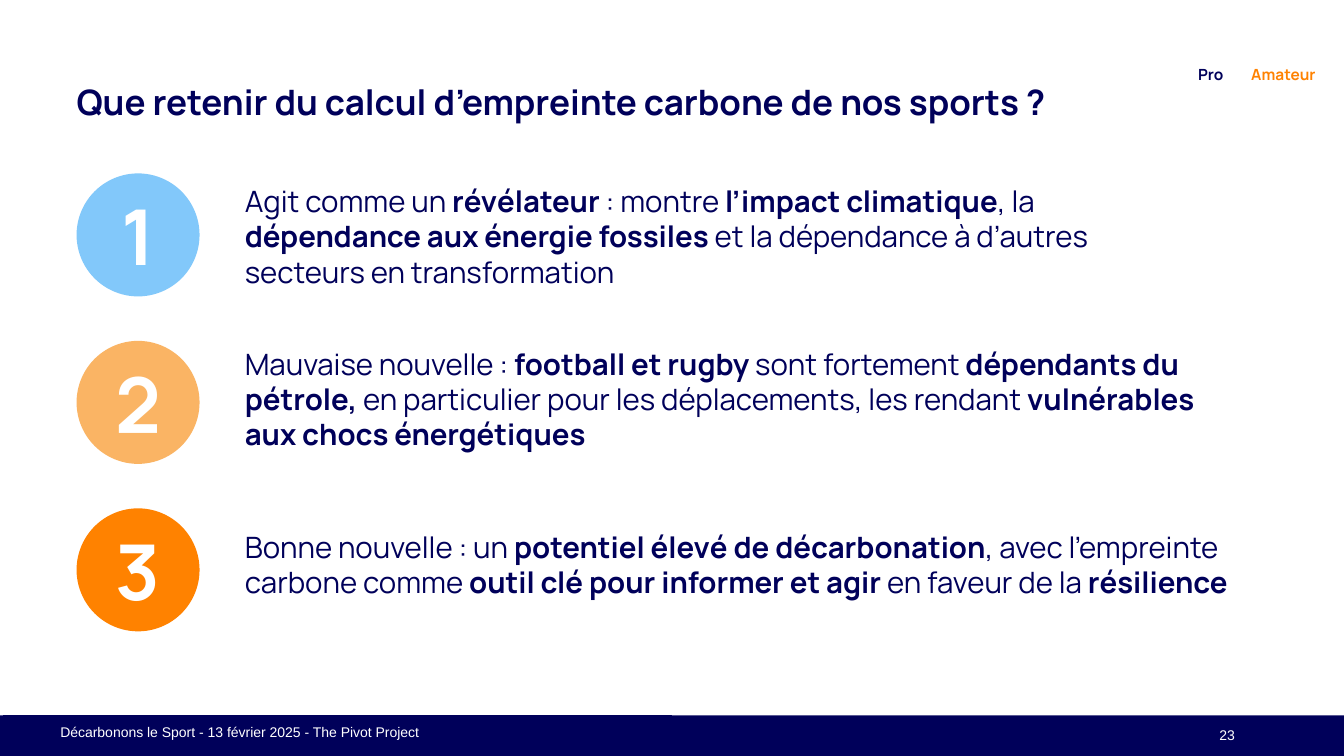
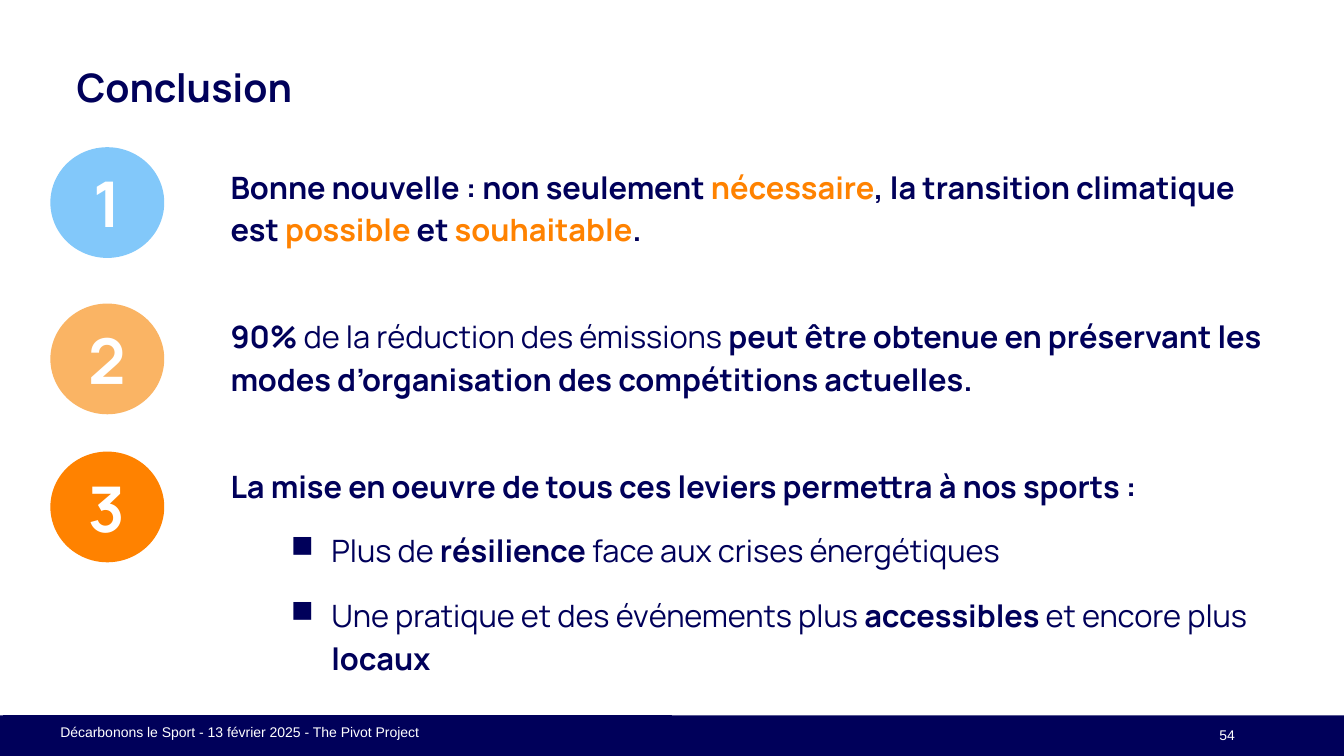
from dataclasses import dataclass

from lxml.etree import SubElement
from pptx import Presentation
from pptx.dml.color import RGBColor
from pptx.enum.shapes import MSO_SHAPE
from pptx.enum.text import MSO_ANCHOR, PP_ALIGN
from pptx.oxml.ns import qn
from pptx.util import Cm, Pt


@dataclass(frozen=True)
class Theme:
    navy: str = "00005A"
    orange: str = "FF8200"
    white: str = "FFFFFF"
    circles: tuple = ("82C8FA", "FAB464", "FF8200")
    font: str = "Manrope"
    footer_font: str = "Arial"
    footer_size: int = 10
    tag_size: int = 11
    lesson_size: int = 21
    conclusion_size: int = 22
    inset: float = 0.25


THEME = Theme()


@dataclass(frozen=True)
class Span:
    text: str
    bold: bool = False
    color: str = THEME.navy


def strong(text):
    return Span(text, bold=True)


def accent(text):
    return Span(text, bold=True, color=THEME.orange)


# Content; positions and sizes are in centimetres
FOOTER = "Décarbonons le Sport - 13 février 2025 - The Pivot Project"
BANDS = [(0, 18.03, 33.87, 1.02), (0.08, 18.03, 16.84, 0.97)]

LESSONS_TITLE = "Que retenir du calcul d’empreinte carbone de nos sports ?"
TAGS = [
    ("Pro", THEME.navy, (29.46, 1.52, 2.11, 0.71)),
    ("Amateur", THEME.orange, (31.06, 1.52, 2.57, 0.71)),
]
LESSON_LEFT = 5.92
# Each lesson: top, width, spans
LESSONS = [
    (4.37, 24.16, [
        Span("Agit comme un "), strong("révélateur "), Span(": montre "),
        strong("l’impact climatique"), Span(", la "),
        strong("dépendance aux énergie fossiles"),
        Span(" et la dépendance à d’autres secteurs en transformation"),
    ]),
    (8.46, 25.81, [
        Span("Mauvaise nouvelle : "), strong("football et rugby"),
        Span(" sont fortement"), strong(" dépendants du pétrole,"),
        Span(" en particulier pour les déplacements, les rendant "),
        strong("vulnérables aux chocs énergétiques"),
    ]),
    (13.08, 26.31, [
        Span("Bonne nouvelle : un "), strong("potentiel élevé de décarbonation"),
        Span(", avec l’empreinte carbone comme "),
        strong("outil clé pour informer et agir"),
        Span(" en faveur de la "), strong("résilience"),
    ]),
]

CONCLUSION_TITLE = "Conclusion"
# Each paragraph: space before in points, bulleted, spans
CONCLUSIONS = [
    (0, False, [
        strong("Bonne nouvelle : non seulement "), accent("nécessaire"),
        strong(", la transition climatique est "), accent("possible"),
        strong(" et "), accent("souhaitable"), strong("."),
    ]),
    (46, False, [
        strong("90% "), Span("de la réduction des émissions"),
        strong(" peut être obtenue en préservant les modes d’organisation"
               " des compétitions actuelles."),
    ]),
    (46, False, [
        strong("La mise en oeuvre de tous ces leviers permettra à nos sports :"),
    ]),
    (16, True, [
        Span("Plus de "), strong("résilience"),
        Span(" face aux crises énergétiques"),
    ]),
    (16, True, [
        Span("Une pratique et des événements plus "), strong("accessibles"),
        Span(" et encore plus "), strong("locaux"),
    ]),
]


# Shared drawing helpers
def write(para, spans, size, font=THEME.font):
    for span in spans:
        run = para.add_run()
        run.text = span.text
        run.font.name = font
        run.font.size = Pt(size)
        run.font.bold = span.bold
        run.font.color.rgb = RGBColor.from_string(span.color)


def prepare_frame(frame, inset, anchor, wrap=True):
    frame.word_wrap = wrap
    frame.vertical_anchor = anchor
    frame.margin_left = frame.margin_right = Cm(inset)
    frame.margin_top = frame.margin_bottom = Cm(inset)


def add_text(page, place, spans, size, font=THEME.font, inset=THEME.inset,
             anchor=MSO_ANCHOR.TOP, align=PP_ALIGN.LEFT):
    box = page.shapes.add_textbox(*map(Cm, place))
    prepare_frame(box.text_frame, inset, anchor)
    para = box.text_frame.paragraphs[0]
    para.alignment = align
    write(para, spans, size, font)
    return box


def add_filled(page, kind, place, color):
    shape = page.shapes.add_shape(kind, *map(Cm, place))
    shape.shadow.inherit = False
    shape.fill.solid()
    shape.fill.fore_color.rgb = RGBColor.from_string(color)
    shape.line.fill.background()
    return shape


def add_circles(page, left, tops, width, height, size):
    for number, (top, color) in enumerate(zip(tops, THEME.circles), start=1):
        circle = add_filled(page, MSO_SHAPE.OVAL, (left, top, width, height), color)
        prepare_frame(circle.text_frame, 0, MSO_ANCHOR.MIDDLE, wrap=False)
        para = circle.text_frame.paragraphs[0]
        para.alignment = PP_ALIGN.CENTER
        write(para, [Span(str(number), True, THEME.white)], size)


def add_page(deck, title, title_place, title_size, number):
    page = deck.slides.add_slide(deck.slide_layouts[6])
    for place in BANDS:
        band = add_filled(page, MSO_SHAPE.RECTANGLE, place, THEME.navy)
    # Only the inner band is outlined
    band.line.color.rgb = RGBColor.from_string(THEME.navy)
    band.line.width = Pt(0.75)
    add_text(page, title_place, [strong(title)], title_size, inset=0)
    add_text(page, (1.27, 18.01, 16.97, 1.02), [Span(FOOTER, color=THEME.white)],
             THEME.footer_size, THEME.footer_font)
    add_text(page, (24.31, 18.01, 6.81, 1.02),
             [Span(str(number), color=THEME.white)], THEME.footer_size,
             THEME.footer_font, 0, MSO_ANCHOR.MIDDLE, PP_ALIGN.RIGHT)
    return page


def set_indent(para, left, hanging=0.0, bullet=None):
    properties = para._p.get_or_add_pPr()
    properties.set("marL", str(Cm(left)))
    properties.set("indent", str(Cm(-hanging)))
    if bullet:
        color = SubElement(properties, qn("a:buClr"))
        SubElement(color, qn("a:srgbClr")).set("val", THEME.navy)
        SubElement(properties, qn("a:buChar")).set("char", bullet)


# Slides
def build_lessons(deck):
    page = add_page(deck, LESSONS_TITLE, (1.93, 2.03, 29.64, 1.6), 25, 23)
    for label, color, place in TAGS:
        add_text(page, place, [Span(label, True, color)], THEME.tag_size,
                 anchor=MSO_ANCHOR.MIDDLE, align=PP_ALIGN.CENTER)
    tops = [4.37 + 4.22 * row for row in range(len(LESSONS))]
    add_circles(page, 1.93, tops, 3.1, 3.1, 55)
    for top, width, spans in LESSONS:
        add_text(page, (LESSON_LEFT, top, width, 3.1), spans, THEME.lesson_size)


def build_conclusion(deck):
    page = add_page(deck, CONCLUSION_TITLE, (1.93, 1.6, 25.17, 1.02), 28, 54)
    add_circles(page, 1.27, (3.71, 7.65, 11.38), 2.87, 2.79, 45)
    box = page.shapes.add_textbox(Cm(4.29), Cm(3.86), Cm(28.02), Cm(13.5))
    frame = box.text_frame
    prepare_frame(frame, THEME.inset, MSO_ANCHOR.TOP)
    for index, (space, bulleted, spans) in enumerate(CONCLUSIONS):
        para = frame.add_paragraph() if index else frame.paragraphs[0]
        para.line_spacing = 1.15
        if space:
            para.space_before = Pt(space)
        if bulleted:
            set_indent(para, 3.81, 1.02, "■")
        else:
            set_indent(para, 1.27)
        write(para, spans, THEME.conclusion_size)


def main():
    deck = Presentation()
    deck.slide_width, deck.slide_height = Cm(33.87), Cm(19.05)
    build_lessons(deck)
    build_conclusion(deck)
    deck.save("out.pptx")


if __name__ == "__main__":
    main()
